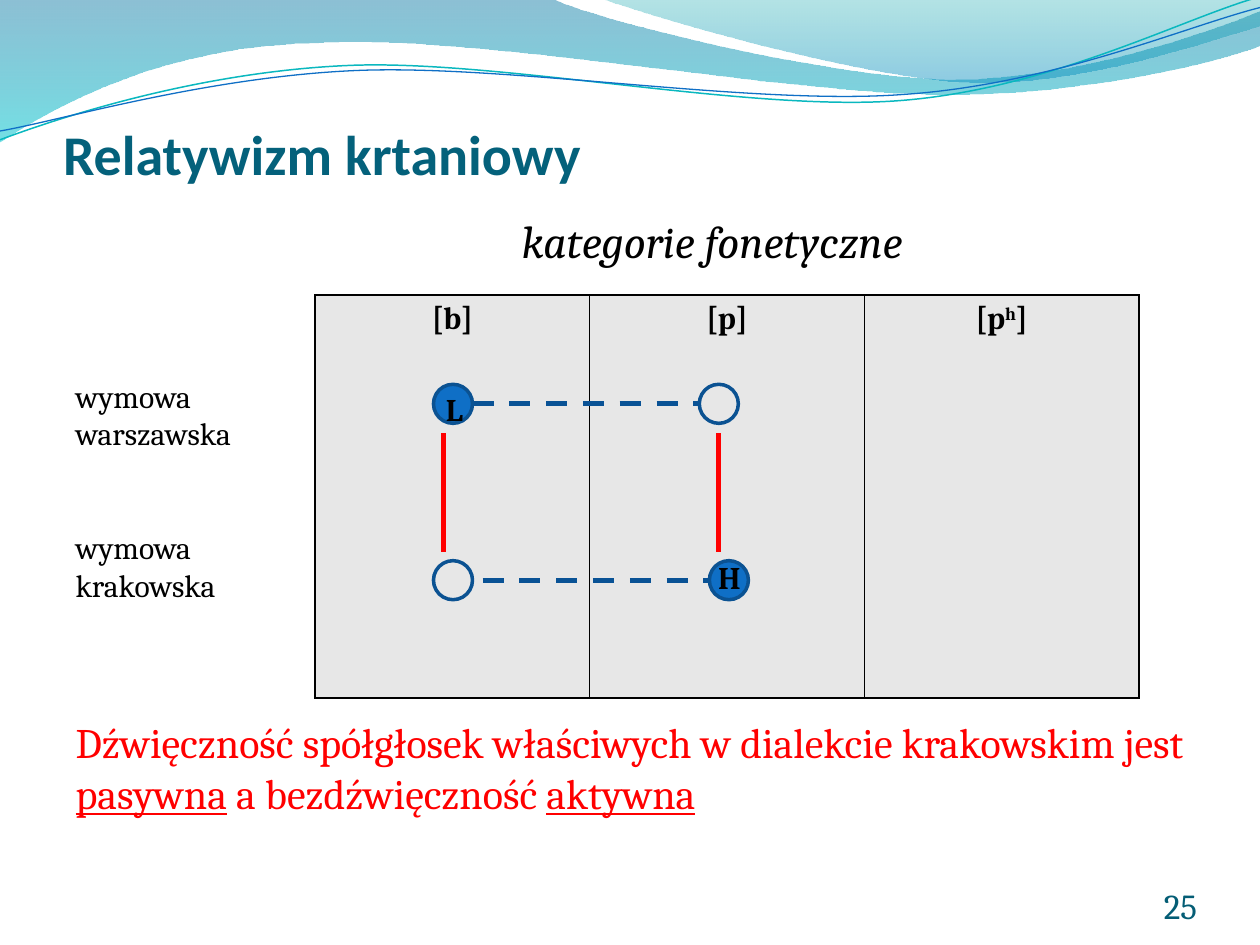
"""Build the slide on laryngeal relativism: a table of phonetic categories for two dialects."""
import dataclasses
import pptx
import pptx.dml.color
import pptx.enum.dml
import pptx.enum.shapes
import pptx.enum.text
import pptx.oxml
import pptx.oxml.ns
import pptx.util
from pptx.util import Inches, Pt


@dataclasses.dataclass(frozen=True)
class Theme:
    heading_font: str = "Calibri"
    body_font: str = "Cambria"
    title: str = "04617B"
    number: str = "045D75"
    text: str = "000000"
    accent: str = "FF0000"
    disc: str = "0F6FC6"
    ring: str = "0B5292"
    dash: str = "095295"
    cell: str = "E7E7E7"
    wave_left: tuple = (("0074A1", 45), ("00C6CF", 55))
    wave_right: tuple = (("00A1A9", 30), ("008BBF", 45))
    wave_teal: str = "0AB8BF"
    wave_blue: str = "0F6FC6"
    title_size: int = 32
    category_size: int = 26
    remark_size: int = 24
    number_size: int = 20
    label_size: int = 18


theme = Theme()
rgb = pptx.dml.color.RGBColor.from_string
align = pptx.enum.text.PP_ALIGN
anchor = pptx.enum.text.MSO_ANCHOR
autosize = pptx.enum.text.MSO_AUTO_SIZE


def set_font(font, size, color, name=theme.body_font, bold=False, italic=False):
    font.name, font.size, font.bold, font.italic = name, Pt(size), bold, italic
    font.color.rgb = rgb(color)


def add_xml(parent, tag, content="", **attributes):
    values = "".join(f' {key}="{value}"' for key, value in attributes.items())
    namespace = pptx.oxml.ns.nsdecls("a")
    element = pptx.oxml.parse_xml(f"<a:{tag} {namespace}{values}>{content}</a:{tag}>")
    parent.append(element)
    return element


deck = pptx.Presentation()
deck.slide_width, deck.slide_height = Inches(10), Inches(7.5)
page = deck.slides.add_slide(deck.slide_layouts[1])
shapes = page.shapes

waves = [
    ([(0, 0), (4.4, 0), (4.76, 0.17, 6.64, 0.63, 7.58, 0.63), (8.53, 0.63, 9.58, 0.26, 10, 0.09),
      (10.01, 0.36), (9.83, 0.44, 8.7, 0.76, 7.46, 0.75), (6.22, 0.75, 3.82, 0.28, 2.57, 0.34),
      (1.29, 0.36, 0.46, 0.83, -0.01, 1.13)], theme.wave_left, None, 0),
    ([(4.79, 0), (5.09, 0.11, 6.82, 0.62, 7.69, 0.65), (8.56, 0.69, 9.61, 0.32, 10, 0.21),
      (10, 0)], theme.wave_right, None, 0),
    ([(0, 1.11), (0.48, 0.93, 1.58, 0.57, 2.77, 0.52), (3.95, 0.47, 5.93, 0.89, 7.13, 0.8),
      (8.33, 0.71, 9.38, 0.15, 9.98, -0.02)], None, theme.wave_teal, 0.85),
    ([(0, 1.04), (0.47, 0.96, 1.64, 0.61, 2.83, 0.56), (4.03, 0.51, 5.97, 0.84, 7.17, 0.75),
      (8.36, 0.67, 9.41, 0.21, 10, 0.06)], None, theme.wave_blue, 0.75),
]
for segments, stops, stroke, weight in waves:
    corners = [(Inches(segment[i]), Inches(segment[i + 1]))
               for segment in segments for i in range(0, len(segment), 2)]
    builder = shapes.build_freeform(*corners[0], scale=1.0)
    builder.add_line_segments(corners[1:], close=stops is not None)
    wave = builder.convert_to_shape()
    wave.shadow.inherit = False
    outline = wave._element.xpath(".//a:path")[0]
    straight = iter(outline.xpath("./a:lnTo"))
    for segment in segments[1:]:
        nodes = [next(straight) for _ in range(len(segment) // 2)]
        if len(nodes) == 3:
            curve = add_xml(outline, "cubicBezTo")
            nodes[0].addprevious(curve)
            for node in nodes:
                curve.append(node[0])
                outline.remove(node)
    if stops:
        wave.line.fill.background()
        wave.fill.gradient()
        wave.fill.gradient_angle = 270
        for stop, (color, opacity), position in zip(wave.fill.gradient_stops, stops, (0, 1)):
            stop.color.rgb = rgb(color)
            stop.position = position
            add_xml(stop._gs[0], "alpha", val=opacity * 1000)
    else:
        wave.fill.background()
        wave.line.color.rgb, wave.line.width = rgb(stroke), Pt(weight)

title = shapes.title
title.left, title.top, title.width, title.height = map(Inches, (0.5, 0.77, 9, 0.71))
frame = title.text_frame
frame.text = "Relatywizm krtaniowy"
frame.auto_size = autosize.NONE
frame.vertical_anchor = anchor.BOTTOM
frame.margin_left = frame.margin_right = frame.margin_bottom = 0
frame.paragraphs[0].alignment = align.LEFT
set_font(frame.paragraphs[0].font, theme.title_size, theme.title, theme.heading_font, bold=True)

body = page.placeholders[1]
body.left, body.top, body.width, body.height = map(Inches, (0.5, 1.64, 9, 5.28))
frame = body.text_frame
frame.auto_size = autosize.NONE
frame.margin_right = 0
remark = ["Dźwięczność spółgłosek właściwych w dialekcie krakowskim jest ", "pasywna",
          " a bezdźwięczność ", "aktywna"]
lines = [
    (["kategorie fonetyczne"], theme.category_size, theme.text, 31.3, 0, 3.54),
    (["wymowa"], theme.label_size, theme.text, 21.5, 62.5, 0),
    (["warszawska"], theme.label_size, theme.text, 21.3, 0, 0),
    (["wymowa"], theme.label_size, theme.text, 21.5, 43.5, 0),
    (["krakowska"], theme.label_size, theme.text, 21.5, 0, 0),
    (remark, theme.remark_size, theme.accent, 29.3, 64.2, 0),
]
for index, (pieces, size, color, height, before, indent) in enumerate(lines):
    para = frame.add_paragraph() if index else frame.paragraphs[0]
    para.line_spacing, para.space_before, para.space_after = Pt(height), Pt(before), Pt(0)
    properties = para._p.get_or_add_pPr()
    properties.set("marL", str(Inches(indent)))
    properties.set("indent", "0")
    add_xml(properties, "buNone")
    set_font(para.font, size, color, italic=index == 0)
    for position, piece in enumerate(pieces):
        span = para.add_run()
        span.text = piece
        if position % 2:
            span.font.underline = True

table = shapes.add_table(1, 3, Inches(2.5), Inches(2.34), Inches(6.54), Inches(3.2)).table
table.first_row = table.horz_banding = False
for cell, pieces in zip(table.iter_cells(), (["[b]"], ["[p]"], ["[p", "h", "]"])):
    cell.fill.solid()
    cell.fill.fore_color.rgb = rgb(theme.cell)
    para = cell.text_frame.paragraphs[0]
    para.alignment = align.CENTER
    set_font(para.font, theme.label_size, theme.text, bold=True)
    for position, piece in enumerate(pieces):
        span = para.add_run()
        span.text = piece
        if position == 1:
            span.font._element.set("baseline", "30000")
    properties = cell._tc.get_or_add_tcPr()
    fill = properties[0]
    for side in ("lnL", "lnR", "lnT", "lnB"):
        add_xml(properties, side, f'<a:solidFill><a:srgbClr val="{theme.text}"/></a:solidFill>', w=Pt(1))
    properties.append(fill)

for left, top, filled in ((3.44, 3.05, True), (5.55, 3.05, False), (5.63, 4.45, True), (3.44, 4.45, False)):
    disc = shapes.add_shape(pptx.enum.shapes.MSO_SHAPE.OVAL, Inches(left), Inches(top), Inches(0.31), Inches(0.31))
    disc.shadow.inherit = False
    disc.line.color.rgb, disc.line.width = rgb(theme.ring), Pt(2)
    if filled:
        disc.fill.solid()
        disc.fill.fore_color.rgb = rgb(theme.disc)
    else:
        disc.fill.background()

links = [(3.75, 3.2, 5.55, 3.2), (3.83, 4.61, 5.63, 4.61), (5.7, 3.44, 5.7, 4.38), (3.52, 3.44, 3.52, 4.38)]
for ends in links:
    horizontal = ends[1] == ends[3]
    link = shapes.add_connector(pptx.enum.shapes.MSO_CONNECTOR.STRAIGHT, *map(Inches, ends))
    link.line.width = Pt(3)
    link.line.color.rgb = rgb(theme.dash if horizontal else theme.accent)
    if horizontal:
        link.line.dash_style = pptx.enum.dml.MSO_LINE.DASH
    add_xml(link._element.spPr, "effectLst")

for text, left, top, width, inset in (("L", 3.44, 3.05, 0.47, 0.1), ("H", 5.55, 4.38, 0.55, 0.15)):
    box = shapes.add_textbox(Inches(left), Inches(top), Inches(width), Inches(0.4))
    frame = box.text_frame
    frame.word_wrap = True
    frame.auto_size = autosize.SHAPE_TO_FIT_TEXT
    frame.margin_left = Inches(inset)
    frame.text = text
    set_font(frame.paragraphs[0].font, theme.label_size, theme.text, bold=True)

box = shapes.add_textbox(Inches(8.67), Inches(6.95), Inches(0.83), Inches(0.4))
frame = box.text_frame
frame.word_wrap = True
frame.margin_left = frame.margin_right = frame.margin_top = frame.margin_bottom = 0
frame.vertical_anchor = anchor.BOTTOM
frame.text = "25"
frame.paragraphs[0].alignment = align.RIGHT
set_font(frame.paragraphs[0].font, theme.number_size, theme.number)

deck.save("out.pptx")
